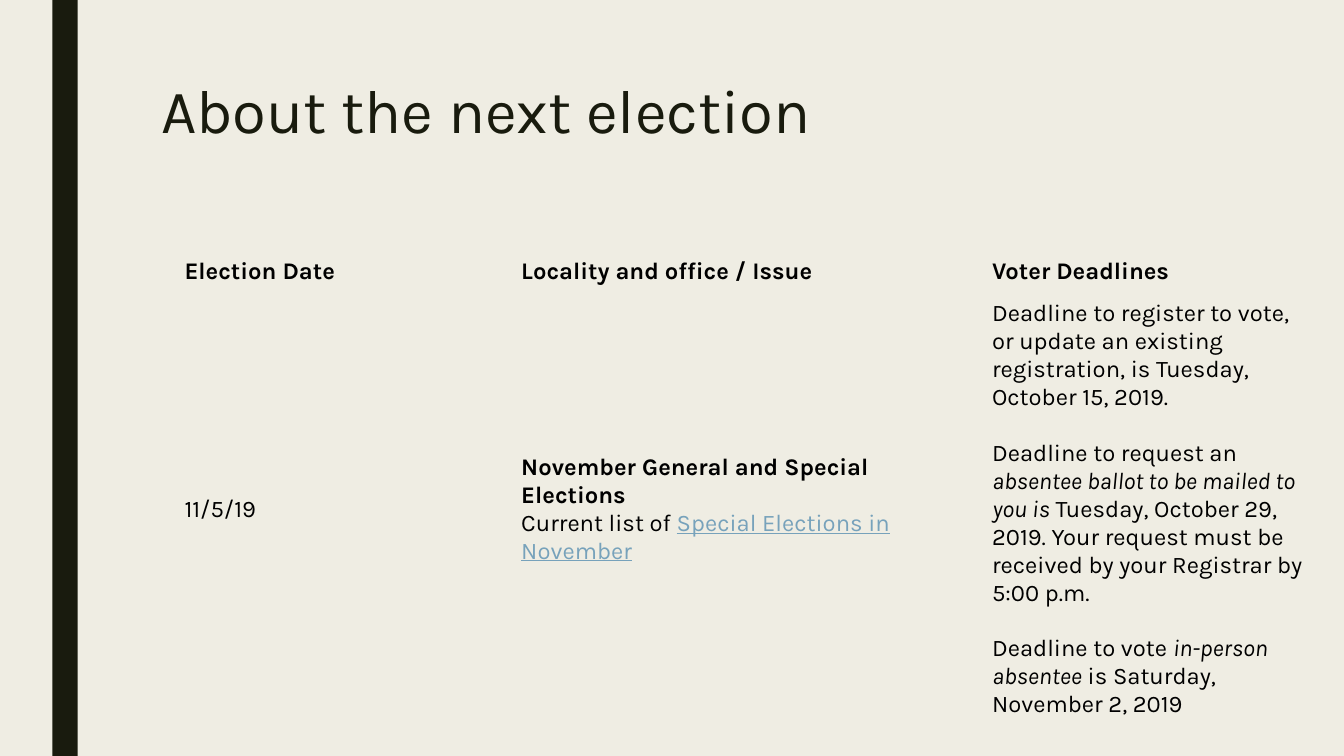
from dataclasses import dataclass

from pptx import Presentation
from pptx.dml.color import RGBColor
from pptx.enum.shapes import MSO_SHAPE
from pptx.enum.text import MSO_ANCHOR
from pptx.oxml.ns import qn
from pptx.slide import Slide
from pptx.table import _Cell as Cell
from pptx.text.text import _Paragraph as Para
from pptx.util import Inches, Pt

RECT = MSO_SHAPE.RECTANGLE
TOP, MIDDLE = MSO_ANCHOR.TOP, MSO_ANCHOR.MIDDLE
NO_GRID = "{2D5ABB26-0587-4C30-8999-92F81FD0307C}"


@dataclass(frozen=True)
class Theme:
    font: str = "Karla"
    paper: str = "EFEDE3"
    dark: str = "191B0E"
    ink: str = "000000"
    link: str = "77A2BB"
    title: float = 44
    body: float = 17
    gap: float = 20


THEME = Theme()


@dataclass(frozen=True)
class Span:
    text: str
    bold: bool = False
    italic: bool = False
    under: bool = False
    color: str = THEME.ink
    size: float = THEME.body
    wrap: bool = False  # line break after the span


# Each cell is a list of paragraphs, each paragraph a list of spans
HEADS = ["Election Date", "Locality and office / Issue", "Voter Deadlines"]
ROWS: list[list[list[list[Span]]]] = [
    [[[Span(head, bold=True)]] for head in HEADS],
    [
        [[Span("11/5/19")]],
        [[
            Span("November General and Special Elections", bold=True, wrap=True),
            Span("Current list of "),
            Span("Special Elections in November", under=True, color=THEME.link),
        ]],
        [
            [Span("Deadline to register to vote, or update an existing "
                  "registration, is Tuesday, October 15, 2019.")],
            [
                Span("Deadline to request an "),
                Span("absentee ballot to be mailed to you is", italic=True),
                Span(" Tuesday, October 29, 2019. Your request must be "
                     "received by your Registrar by 5:00 p.m."),
            ],
            [
                Span("Deadline to vote "),
                Span("in-person absentee", italic=True),
                Span(" is Saturday, November 2, 2019"),
            ],
        ],
    ],
]
WIDTHS = [3.34, 4.67, 3.34]
HEIGHTS = [0.38, 4.06]


def add_spans(para: Para, spans: list[Span]) -> None:
    for span in spans:
        run = para.add_run()
        run.text = span.text
        font = run.font
        font.name = THEME.font
        font.size = Pt(span.size)
        font.bold = span.bold
        font.italic = span.italic
        font.underline = span.under
        font.color.rgb = RGBColor.from_string(span.color)
        if span.wrap:
            para.add_line_break()


def fill_cell(cell: Cell, paras: list[list[Span]]) -> None:
    cell.fill.background()
    cell.vertical_anchor = MIDDLE
    frame = cell.text_frame
    for i, spans in enumerate(paras):
        para = frame.add_paragraph() if i else frame.paragraphs[0]
        if i:
            para.space_before = Pt(THEME.gap)
        add_spans(para, spans)


def add_bar(slide: Slide) -> None:
    bar = slide.shapes.add_shape(RECT, Inches(0.52), 0, Inches(0.25), Inches(7.5))
    bar.shadow.inherit = False
    bar.fill.solid()
    bar.fill.fore_color.rgb = RGBColor.from_string(THEME.dark)
    bar.line.fill.background()


def add_title(slide: Slide, text: str) -> None:
    box = slide.shapes.add_textbox(Inches(1.5), Inches(0.75), Inches(10.5), Inches(1.62))
    frame = box.text_frame
    frame.word_wrap = True
    frame.vertical_anchor = TOP
    para = frame.paragraphs[0]
    para.line_spacing = 0.89
    add_spans(para, [Span(text, color=THEME.dark, size=THEME.title)])


def add_grid(slide: Slide) -> None:
    frame = slide.shapes.add_table(
        len(ROWS), len(WIDTHS), Inches(1.73), Inches(2.5),
        Inches(sum(WIDTHS)), Inches(sum(HEIGHTS)))
    for style in frame.element.iter(qn("a:tableStyleId")):
        style.text = NO_GRID
    table = frame.table
    table.first_row = table.horz_banding = False
    for col, width in zip(table.columns, WIDTHS):
        col.width = Inches(width)
    for row, height, cells in zip(table.rows, HEIGHTS, ROWS):
        row.height = Inches(height)
        for cell, paras in zip(row.cells, cells):
            fill_cell(cell, paras)


def main() -> None:
    deck = Presentation()
    deck.slide_width, deck.slide_height = Inches(13.33), Inches(7.5)
    slide = deck.slides.add_slide(deck.slide_layouts[6])

    # Background and side bar
    back = slide.background.fill
    back.solid()
    back.fore_color.rgb = RGBColor.from_string(THEME.paper)
    add_bar(slide)

    # Title and table
    add_title(slide, "About the next election")
    add_grid(slide)
    deck.save("out.pptx")


if __name__ == "__main__":
    main()
